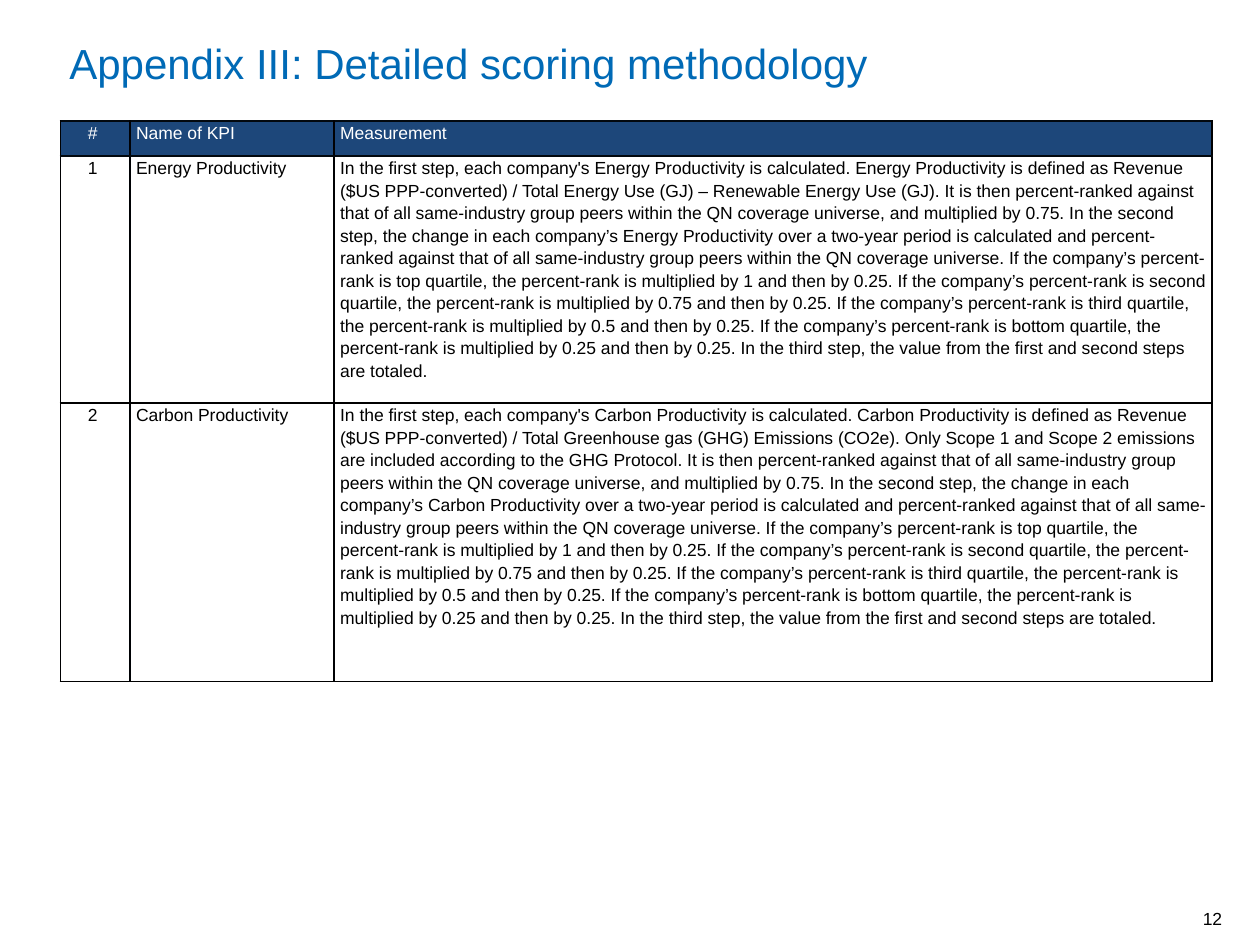
from lxml import etree
from pptx import Presentation
from pptx import util as u
from pptx.dml.color import RGBColor
from pptx.enum import text as tx
from pptx.oxml.ns import qn

SCALE = 9144  # EMU per px, 100 px to the inch
FONT = "Arial"
COLORS = {
    "title": "006AB6", "head": "1D477A", "white": "FFFFFF", "black": "000000",
    "outer": "000001", "inner": "000104", "top": "02080E",
}
LEFT, CENTER, RIGHT = tx.PP_ALIGN.LEFT, tx.PP_ALIGN.CENTER, tx.PP_ALIGN.RIGHT

METHOD = (
    "In the first step, each company's {kpi} is calculated. {kpi} is defined as "
    "Revenue ($US PPP-converted) / {base} It is then percent‐ranked against that of "
    "all same‐industry group peers within the QN coverage universe, and multiplied "
    "by 0.75. In the second step, the change in each company’s {kpi} over a two-year "
    "period is calculated and percent‐ranked against that of all same‐industry group "
    "peers within the QN coverage universe. {tiers} In the third step, the value from "
    "the first and second steps are totaled."
)
TIERS = {"top": "1", "second": "0.75", "third": "0.5", "bottom": "0.25"}
KPIS = {
    "Energy Productivity": "Total Energy Use (GJ) – Renewable Energy Use (GJ).",
    "Carbon Productivity": "Total Greenhouse gas (GHG) Emissions (CO2e). Only Scope 1 "
    "and Scope 2 emissions are included according to the GHG Protocol.",
}


def px(*vals):
    return [u.Emu(v * SCALE) for v in vals]


def write(frame, words, size=10, color="black", align=LEFT, space=1.0,
          inset=(0, 0, 0, 0), anchor=tx.MSO_ANCHOR.TOP):
    frame.word_wrap = True
    frame.vertical_anchor = anchor
    (frame.margin_left, frame.margin_top,
     frame.margin_right, frame.margin_bottom) = px(*inset)
    para = frame.paragraphs[0]
    para.alignment, para.line_spacing = align, space
    run = para.add_run()
    run.text = words
    run.font.name, run.font.size = FONT, u.Pt(size)
    run.font.color.rgb = RGBColor.from_string(COLORS[color])


def edge(cell, side, color):
    """Draw a 1 pt border on one side (L, R, T or B)."""
    line = etree.SubElement(cell._tc.get_or_add_tcPr(), qn("a:ln" + side), w="12700")
    fill = etree.SubElement(line, qn("a:solidFill"))
    etree.SubElement(fill, qn("a:srgbClr"), val=COLORS[color])


def title(slide, box, words):
    shape = slide.shapes.title
    shape.left, shape.top, shape.width, shape.height = px(*box)
    write(shape.text_frame, words, size=24, color="title", inset=(10, 5, 10, 5))


def method(kpi, base):
    tiers = " ".join(
        f"If the company’s percent‐rank is {name} quartile, the percent‐rank is "
        f"multiplied by {rate} and then by 0.25." for name, rate in TIERS.items())
    return METHOD.format(kpi=kpi, base=base, tiers=tiers)


def scores(slide, box, cols, rows):
    data = [("# ", "Name of KPI", "Measurement")]
    data += [(f"{n} ", kpi, method(kpi, base))
             for n, (kpi, base) in enumerate(KPIS.items(), 1)]
    table = slide.shapes.add_table(len(rows), len(cols), *px(*box)).table
    table.horz_banding = False
    for col, wide in zip(table.columns, px(*cols)):
        col.width = wide
    for row, high in zip(table.rows, px(*rows)):
        row.height = high
    last = len(cols) - 1
    for r, line in enumerate(data):
        for c, words in enumerate(line):
            cell = table.cell(r, c)
            edge(cell, "L", "inner" if c else "outer")
            edge(cell, "R", "inner" if c < last else "outer")
            edge(cell, "T", "top" if r < 2 else "black")
            edge(cell, "B", "black" if r else "top")
            if r:
                cell.fill.background()
            else:
                cell.fill.solid()
                cell.fill.fore_color.rgb = RGBColor.from_string(COLORS["head"])
            cell.margin_left, cell.margin_right = px(5, 5)
            cell.margin_top = cell.margin_bottom = 0
            write(cell.text_frame, words, color="black" if r else "white",
                  align=LEFT if c else CENTER, space=1.15, inset=(5, 0, 5, 0))


def number(slide, box, words):
    frame = slide.shapes.add_textbox(*px(*box)).text_frame
    write(frame, words, align=RIGHT, anchor=tx.MSO_ANCHOR.BOTTOM)


def main():
    deck = Presentation()
    deck.slide_width, deck.slide_height = px(1000, 750)
    slide = deck.slides.add_slide(deck.slide_layouts[5])
    title(slide, (45, 25, 820, 81), "Appendix III: Detailed scoring methodology")
    number(slide, (893, 717, 77, 20), "12")
    scores(slide, (48, 96, 914, 445), cols=(55, 162, 697), rows=(28, 196, 221))
    deck.save("out.pptx")


if __name__ == "__main__":
    main()
